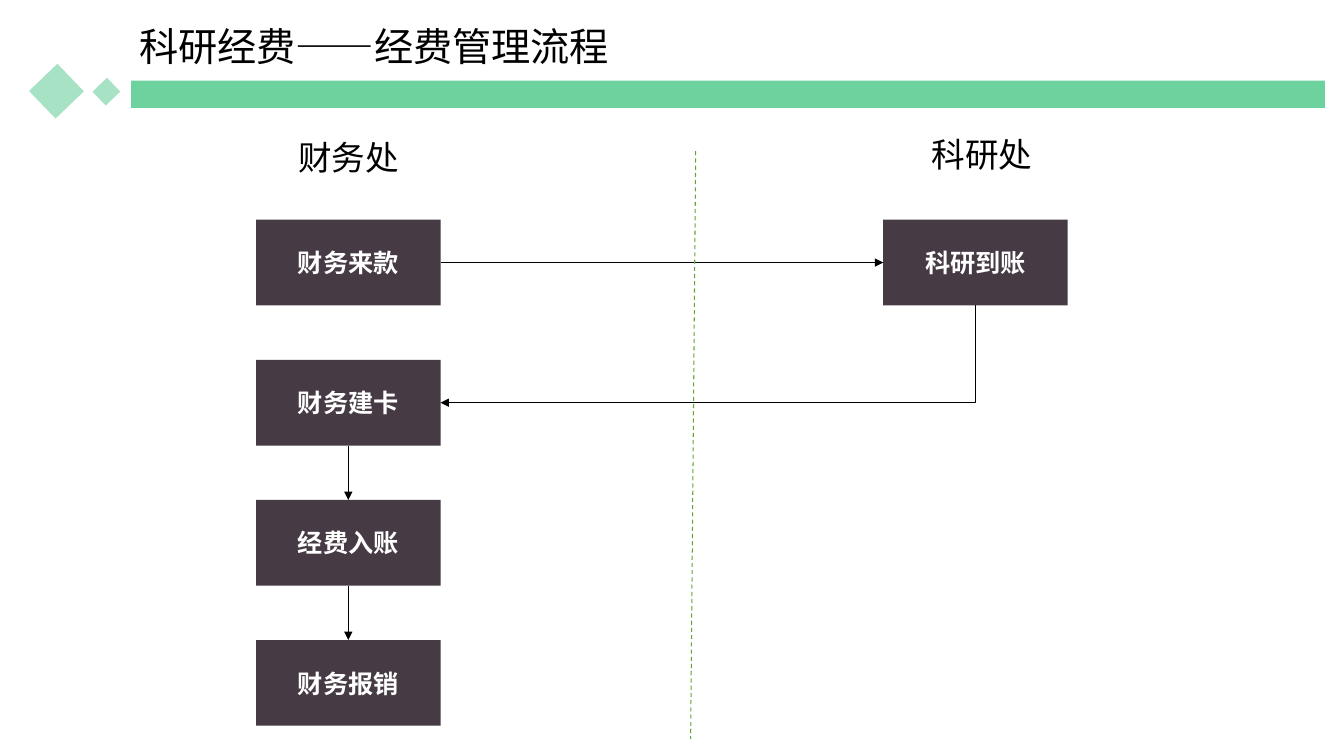
"""Build the research fund management flow slide."""
from dataclasses import dataclass

from lxml import etree
from pptx import Presentation
from pptx.dml.color import RGBColor
from pptx.enum import dml, shapes, text
from pptx.oxml import ns
from pptx.util import Inches, Pt

BLACK = RGBColor(0x00, 0x00, 0x00)
WHITE = RGBColor(0xFF, 0xFF, 0xFF)
GREEN = RGBColor(0x6E, 0xD2, 0x9E)
PALE = RGBColor(0xA8, 0xE2, 0xC5)
LEAF = RGBColor(0x63, 0xA5, 0x37)
PLUM = RGBColor(0x46, 0x3A, 0x44)
FONT = "Noto Sans CJK SC"
TOP, LEFT, RIGHT = 2.18, 2.54, 8.76
WIDE, HIGH, PITCH = 1.83, 0.85, 1.39


@dataclass
class Block:
    left: float
    top: float
    width: float
    height: float
    fill: RGBColor
    turn: float = 0


@dataclass
class Step:
    label: str
    left: float
    row: int


@dataclass
class Head:
    label: str
    left: float
    top: float


@dataclass
class Link:
    start: str
    out: int
    end: str
    into: int


BLOCKS = [
    Block(1.3, 0.8, 11.84, 0.27, GREEN),
    Block(0.37, 0.71, 0.38, 0.39, PALE, 46.1),
    Block(0.96, 0.81, 0.19, 0.2, PALE, 46.1),
]
STEPS = [
    Step("财务来款", LEFT, 0),
    Step("科研到账", RIGHT, 0),
    Step("财务建卡", LEFT, 1),
    Step("经费入账", LEFT, 2),
    Step("财务报销", LEFT, 3),
]
HEADS = [Head("财务处", 2.86, 1.31), Head("科研处", 9.14, 1.28)]
LINKS = [
    Link("财务来款", 3, "科研到账", 1),
    Link("财务建卡", 2, "经费入账", 0),
    Link("经费入账", 2, "财务报销", 0),
]


def write(frame, label: str, size: int, color: RGBColor, align, bold: bool = False) -> None:
    """Fill a text frame with one styled line."""
    frame.text = label
    frame.vertical_anchor = text.MSO_ANCHOR.MIDDLE
    line = frame.paragraphs[0]
    line.alignment = align
    font = line.font
    font.name, font.size, font.bold = FONT, Pt(size), bold
    font.color.rgb = color
    etree.SubElement(font._element, ns.qn("a:ea")).set("typeface", FONT)


def add_block(slide, block: Block):
    """Add a plain filled rectangle."""
    shape = slide.shapes.add_shape(
        shapes.MSO_SHAPE.RECTANGLE, Inches(block.left), Inches(block.top),
        Inches(block.width), Inches(block.height))
    shape.shadow.inherit = False
    shape.fill.solid()
    shape.fill.fore_color.rgb = block.fill
    shape.line.fill.background()
    shape.rotation = block.turn
    return shape


def add_step(slide, step: Step):
    """Add a labelled box of the flow."""
    box = add_block(slide, Block(step.left, TOP + step.row * PITCH, WIDE, HIGH, PLUM))
    write(box.text_frame, step.label, 18, WHITE, text.PP_ALIGN.CENTER, True)
    return box


def add_head(slide, head: Head) -> None:
    """Add a department heading."""
    box = slide.shapes.add_textbox(
        Inches(head.left), Inches(head.top), Inches(1.21), Inches(0.5))
    box.text_frame.word_wrap = False
    write(box.text_frame, head.label, 24, BLACK, text.PP_ALIGN.LEFT)


def add_line(slide, kind, color: RGBColor, ends=(0, 0, 0, 0)):
    """Add a thin connector without a shadow."""
    line = slide.shapes.add_connector(kind, *map(Inches, ends))
    line.line.color.rgb = color
    line.line.width = Pt(0.75)
    etree.SubElement(line._element.spPr, ns.qn("a:effectLst"))
    return line


def add_link(slide, boxes: dict, link: Link, kind=shapes.MSO_CONNECTOR.STRAIGHT):
    """Join two boxes with an arrow."""
    line = add_line(slide, kind, BLACK)
    line.begin_connect(boxes[link.start], link.out)
    line.end_connect(boxes[link.end], link.into)
    tail = etree.SubElement(line.line._get_or_add_ln(), ns.qn("a:tailEnd"))
    tail.set("type", "triangle")
    return line


def add_bend(slide, boxes: dict) -> None:
    """Add the arrow that drops and turns left to the card box."""
    line = add_link(slide, boxes, Link("科研到账", 2, "财务建卡", 3),
                    shapes.MSO_CONNECTOR.ELBOW)
    props = line._element.spPr
    props.find(ns.qn("a:prstGeom")).set("prst", "bentConnector2")
    frame = props.find(ns.qn("a:xfrm"))
    for flip in ("flipH", "flipV"):
        frame.attrib.pop(flip, None)
    frame.set("rot", "5400000")
    drop, run = PITCH - HIGH / 2, RIGHT - LEFT - WIDE / 2
    line.left = Inches(LEFT + WIDE + (run - drop) / 2)
    line.top = Inches(TOP + HIGH + (drop - run) / 2)
    line.width, line.height = Inches(drop), Inches(run)


def main() -> None:
    """Draw the slide and save it."""
    deck = Presentation()
    deck.slide_width, deck.slide_height = Inches(13.33), Inches(7.5)
    slide = deck.slides.add_slide(deck.slide_layouts[5])
    for block in BLOCKS:
        add_block(slide, block)
    title = slide.shapes.title
    title.left, title.top = Inches(1.28), Inches(0.17)
    title.width, title.height = Inches(8.8), Inches(0.57)
    title.text_frame.auto_size = text.MSO_AUTO_SIZE.NONE
    write(title.text_frame, "科研经费——经费管理流程", 28, BLACK, text.PP_ALIGN.LEFT)
    boxes = {step.label: add_step(slide, step) for step in STEPS}
    for link in LINKS:
        add_link(slide, boxes, link)
    add_bend(slide, boxes)
    rule = add_line(slide, shapes.MSO_CONNECTOR.STRAIGHT, LEAF, (6.9, 1.5, 6.85, 7.33))
    rule.line.dash_style = dml.MSO_LINE.DASH
    for head in HEADS:
        add_head(slide, head)
    deck.save("out.pptx")


if __name__ == "__main__":
    main()
